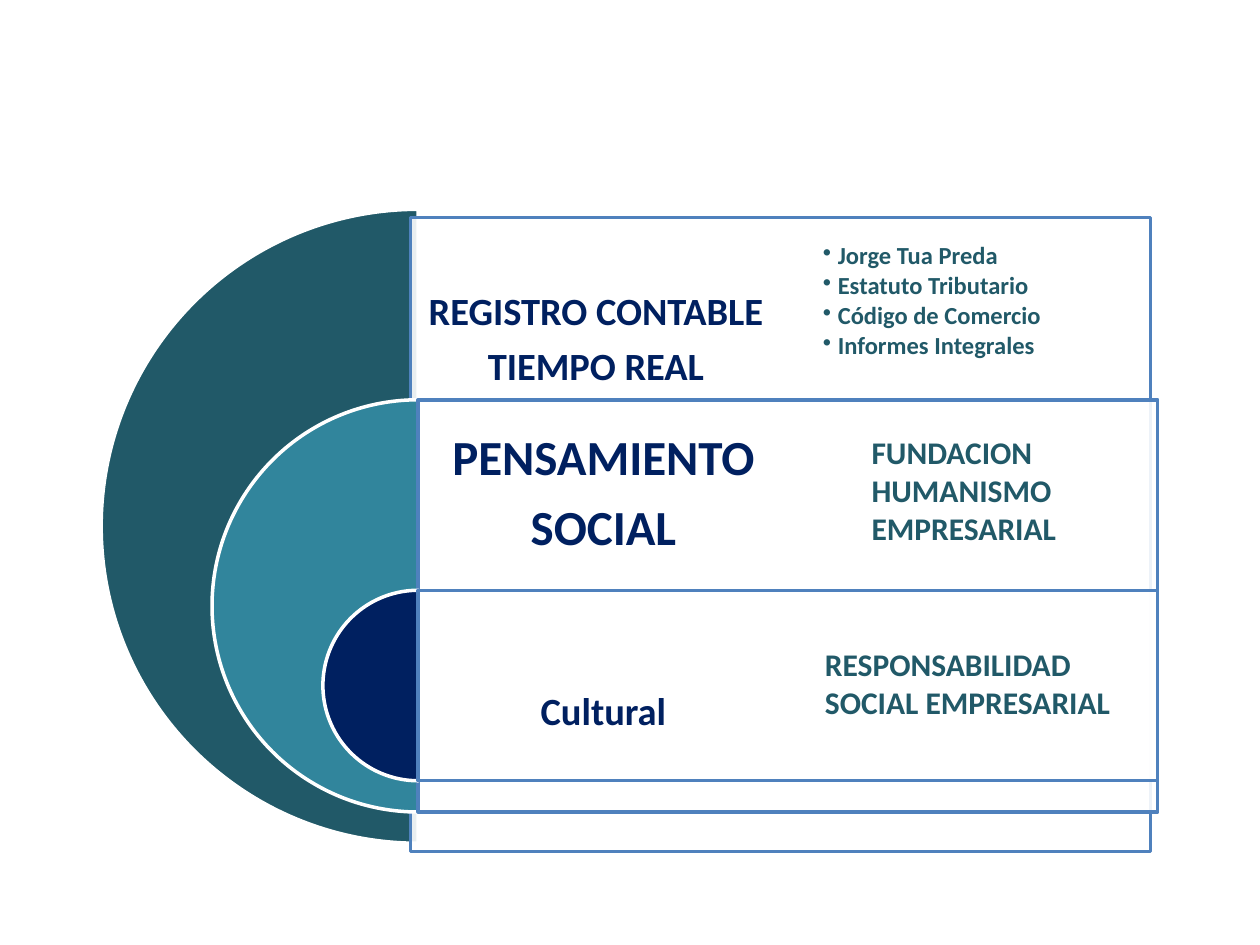
from dataclasses import dataclass

from lxml.etree import SubElement as SubEl
from pptx import Presentation
from pptx.dml.color import RGBColor as Rgb
from pptx.enum.shapes import MSO_SHAPE as Form
from pptx.enum.text import MSO_ANCHOR as Anchor, PP_ALIGN as Align
from pptx.oxml.ns import qn
from pptx.util import Cm, Pt


@dataclass(frozen=True)
class Theme:
    font: str = "Calibri"
    white: str = "FFFFFF"
    edge: str = "4F81BD"
    navy: str = "002060"
    teal: str = "31859C"
    deep: str = "215968"
    head: int = 28
    label: int = 22
    note: int = 18
    item: int = 14
    rule: int = 2


@dataclass(frozen=True)
class Layer:
    lines: tuple[str, ...]
    color: str
    size: int
    diam: float
    inset: float
    drop: float = 0   # extra top margin that lowers the caption
    dx: float = 0
    dy: float = 0


@dataclass(frozen=True)
class Note:
    lines: tuple[str, ...]
    left: float
    top: float
    width: float
    height: float


LOOK = Theme()
AXIS, TOP, STEP = 8.43, 4.22, 3.84
WIDE, HALF = 14.91, 7.47
LAYERS = (
    Layer(("REGISTRO CONTABLE", "TIEMPO REAL"), LOOK.deep, LOOK.label,
          12.78, 0.23, 1.11, -0.15, 0.17),
    Layer(("PENSAMIENTO", "SOCIAL"), LOOK.teal, LOOK.head, 8.31, 0.3),
    Layer(("Cultural",), LOOK.navy, LOOK.label, 3.84, 0.23, 1.11),
)
ITEMS = ("Jorge Tua Preda", "Estatuto Tributario",
         "Código de Comercio", "Informes Integrales")
NOTES = (
    Note(("FUNDACION", "HUMANISMO", "EMPRESARIAL"), 17.32, 8.61, 4.32, 2.57),
    Note(("RESPONSABILIDAD", "SOCIAL EMPRESARIAL"), 16.38, 12.88, 6.32, 1.8),
)


def apply(target, values: dict) -> None:
    for name, value in values.items():
        setattr(target, name, value)


def add_form(slide, form, left: float, top: float, width: float,
             height: float, fill: str, line: str):
    shape = slide.shapes.add_shape(
        form, Cm(left), Cm(top), Cm(width), Cm(height))
    shape.shadow.inherit = False
    shape.fill.solid()
    shape.fill.fore_color.rgb = Rgb.from_string(fill)
    shape.line.color.rgb = Rgb.from_string(line)
    shape.line.width = Pt(LOOK.rule)
    return shape


def fade(shape, alpha: int) -> None:
    """Set the opacity of a solid fill, in percent."""
    color = shape.fill._xPr.find(qn("a:solidFill"))[0]
    SubEl(color, qn("a:alpha"), val=str(alpha * 1000))


def add_bullet(para) -> None:
    props = para._p.get_or_add_pPr()
    props.set("marL", str(Cm(0.3)))
    props.set("indent", str(-Cm(0.3)))
    SubEl(props, qn("a:buChar"), char="•")


def add_text(slide, lines: tuple[str, ...], left: float, top: float,
             width: float, height: float, size: int, color: str,
             frame: dict, form: dict, bullet: bool = False) -> None:
    box = slide.shapes.add_textbox(Cm(left), Cm(top), Cm(width), Cm(height))
    body = box.text_frame
    apply(body, frame)
    for num, line in enumerate(lines):
        para = body.add_paragraph() if num else body.paragraphs[0]
        apply(para, form)
        if bullet:
            add_bullet(para)
        run = para.add_run()
        run.text = line
        apply(run.font, {"name": LOOK.font, "size": Pt(size), "bold": True})
        run.font.color.rgb = Rgb.from_string(color)


def pad(gap: float, drop: float = 0) -> dict:
    """Give equal margins, with the top one enlarged by drop."""
    sides = ("left", "right", "top", "bottom")
    frame = {f"margin_{side}": Cm(gap) for side in sides}
    return frame | {"margin_top": Cm(gap + drop), "word_wrap": True}


def add_layer(slide, layer: Layer, top: float) -> None:
    diam = layer.diam
    pie = add_form(slide, Form.PIE, AXIS - diam / 2, top, diam, diam,
                   layer.color, LOOK.white)
    pie.adjustments[0], pie.adjustments[1] = 54, 162
    left, top = AXIS + layer.dx, top + layer.dy
    panel = add_form(slide, Form.RECTANGLE, left, top, WIDE, diam,
                     LOOK.white, LOOK.edge)
    fade(panel, 90)
    add_text(slide, layer.lines, left, top, HALF, STEP, layer.size, LOOK.navy,
             pad(layer.inset, layer.drop) | {"vertical_anchor": Anchor.MIDDLE},
             {"alignment": Align.CENTER, "line_spacing": 0.9,
              "space_after": Pt(round(layer.size * 0.35, 1))})


def main() -> None:
    deck = Presentation()
    apply(deck, {"slide_width": Cm(25.4), "slide_height": Cm(19.05)})
    slide = deck.slides.add_slide(deck.slide_layouts[6])
    for num, layer in enumerate(LAYERS):
        add_layer(slide, layer, TOP + num * STEP)
    add_text(slide, ITEMS, AXIS + HALF, TOP, HALF, STEP, LOOK.item, LOOK.deep,
             pad(0.69), {"level": 1, "line_spacing": 0.9,
                         "space_after": Pt(2)}, bullet=True)
    for note in NOTES:
        add_text(slide, note.lines, note.left, note.top, note.width,
                 note.height, LOOK.note, LOOK.deep, {"word_wrap": False}, {})
    deck.save("out.pptx")


if __name__ == "__main__":
    main()
